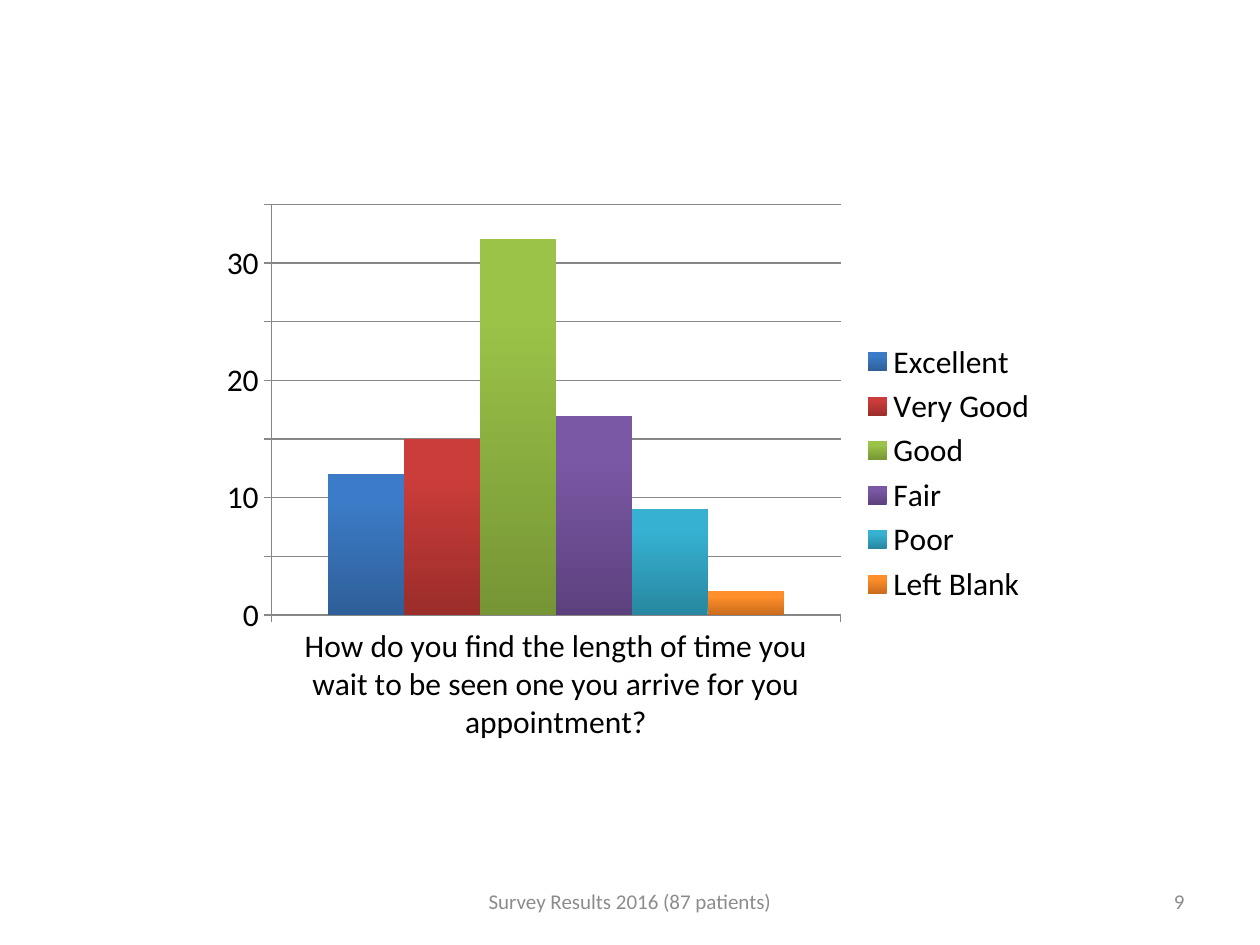
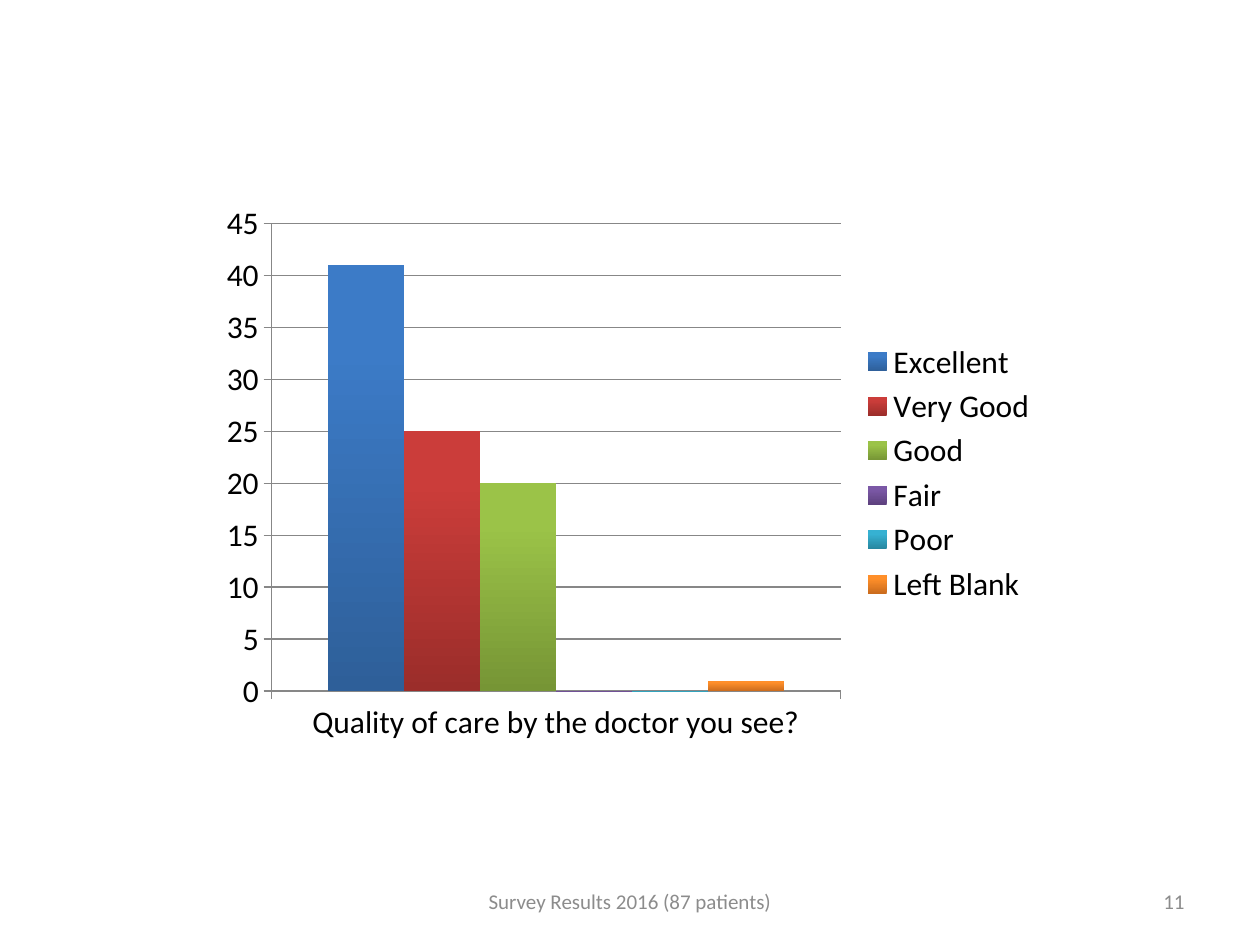
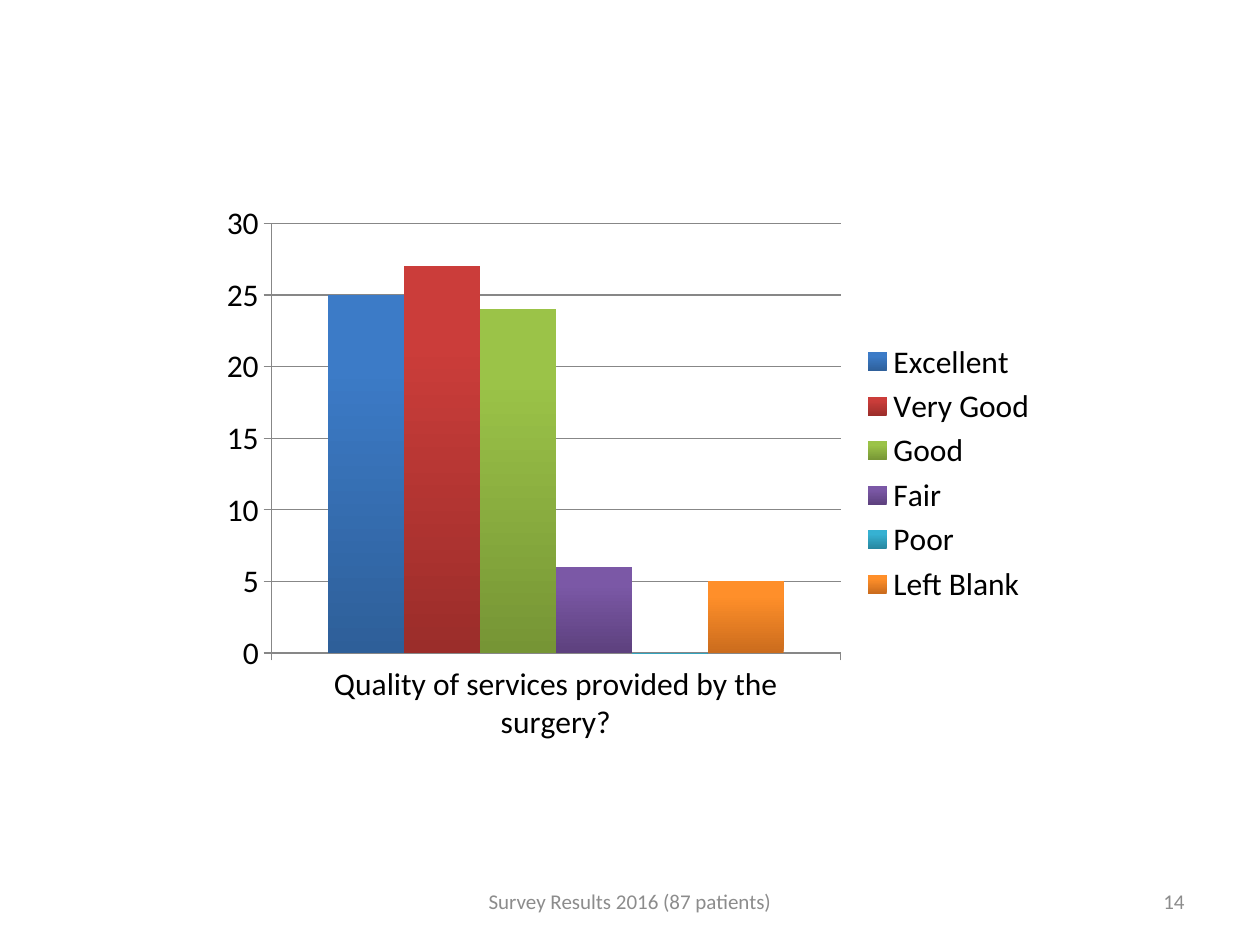
from pptx import Presentation
from pptx.chart.data import CategoryChartData as Data
from pptx.dml.color import RGBColor as RGB
from pptx.enum.chart import XL_CHART_TYPE as Kind, XL_LEGEND_POSITION as Side
from pptx.enum.chart import XL_TICK_MARK as Tick
from pptx.enum.text import MSO_ANCHOR as Anchor, PP_ALIGN as Align
from pptx.util import Inches, Pt

# Shared style
BLACK = RGB(0x00, 0x00, 0x00)
GREY = RGB(0x8C, 0x8C, 0x8C)
LINE = RGB(0x87, 0x87, 0x87)
FACE = "Calibri"
COLS, ROWS = 120, 90

# Answer: dark foot and bright top of its column
TONES = {
    "Excellent": (RGB(0x2E, 0x5F, 0x99), RGB(0x3C, 0x7B, 0xC7)),
    "Very Good": (RGB(0x9B, 0x2D, 0x2A), RGB(0xCB, 0x3D, 0x3A)),
    "Good": (RGB(0x76, 0x95, 0x35), RGB(0x9B, 0xC3, 0x48)),
    "Fair": (RGB(0x5D, 0x41, 0x7E), RGB(0x7B, 0x58, 0xA6)),
    "Poor": (RGB(0x27, 0x87, 0xA0), RGB(0x36, 0xB1, 0xD2)),
    "Left Blank": (RGB(0xCB, 0x6C, 0x1D), RGB(0xFF, 0x8F, 0x2A)),
}

# Grid places: column, row, width, height
PLOT = (20, 18.4, 80, 53.3)
FOOT = (41, 83.4, 38, 4.8)
PAGE = (86, 83.4, 28, 4.8)

NOTE = "Survey Results 2016 (87 patients)"
POLLS = [
    (9, "How do you find the length of time you wait to be seen one you "
        "arrive for you appointment?", (12, 15, 32, 17, 9, 2)),
    (11, "Quality of care by the doctor you see?", (41, 25, 20, 0, 0, 1)),
    (14, "Quality of services provided by the surgery?",
     (25, 27, 24, 6, 0, 5)),
]


def put(item, **looks):
    for name, value in looks.items():
        setattr(item, name, value)


class Deck:
    def __init__(self):
        self.prs = Presentation()
        put(self.prs, slide_width=Inches(10), slide_height=Inches(7.5))
        self.slide = None

    def new(self):
        self.slide = self.prs.slides.add_slide(self.prs.slide_layouts[6])

    def box(self, place):
        col, row, wide, high = place
        x = self.prs.slide_width / COLS
        y = self.prs.slide_height / ROWS
        return int(col * x), int(row * y), int(wide * x), int(high * y)

    def font(self, font, size, color):
        put(font, name=FACE, size=Pt(size))
        font.color.rgb = color

    def text(self, place, words, align):
        frame = self.slide.shapes.add_textbox(*self.box(place)).text_frame
        put(frame, word_wrap=True, vertical_anchor=Anchor.MIDDLE)
        para = frame.paragraphs[0]
        para.alignment = align
        run = para.add_run()
        run.text = words
        self.font(run.font, 12, GREY)

    def line(self, form):
        form.line.color.rgb = LINE
        form.line.width = Pt(0.75)

    def chart(self, place, ask, votes):
        data = Data()
        data.categories = [ask]
        for name, vote in zip(TONES, votes):
            data.add_series(name, [vote])
        chart = self.slide.shapes.add_chart(
            Kind.COLUMN_CLUSTERED, *self.box(place), data).chart
        put(chart, has_title=False, has_legend=True)
        put(chart.legend, position=Side.RIGHT, include_in_layout=False)
        self.font(chart.font, 18, BLACK)

        # Axes and grid
        for axis in (chart.category_axis, chart.value_axis):
            put(axis, major_tick_mark=Tick.OUTSIDE,
                minor_tick_mark=Tick.NONE)
            self.line(axis.format)
        chart.value_axis.has_major_gridlines = True
        self.line(chart.value_axis.major_gridlines.format)

        # Columns, shaded upwards
        plot = chart.plots[0]
        put(plot, gap_width=150, overlap=0, vary_by_categories=False)
        for bar, tones in zip(plot.series, TONES.values()):
            fill = bar.format.fill
            fill.gradient()
            fill.gradient_angle = 90
            for stop, tone, spot in zip(fill.gradient_stops, tones, (0, 0.8)):
                stop.color.rgb = tone
                stop.position = spot
            bar.format.line.fill.background()


def main():
    deck = Deck()
    for page, ask, votes in POLLS:
        deck.new()
        deck.chart(PLOT, ask, votes)
        deck.text(FOOT, NOTE, Align.CENTER)
        deck.text(PAGE, str(page), Align.RIGHT)
    deck.prs.save("out.pptx")


if __name__ == "__main__":
    main()
